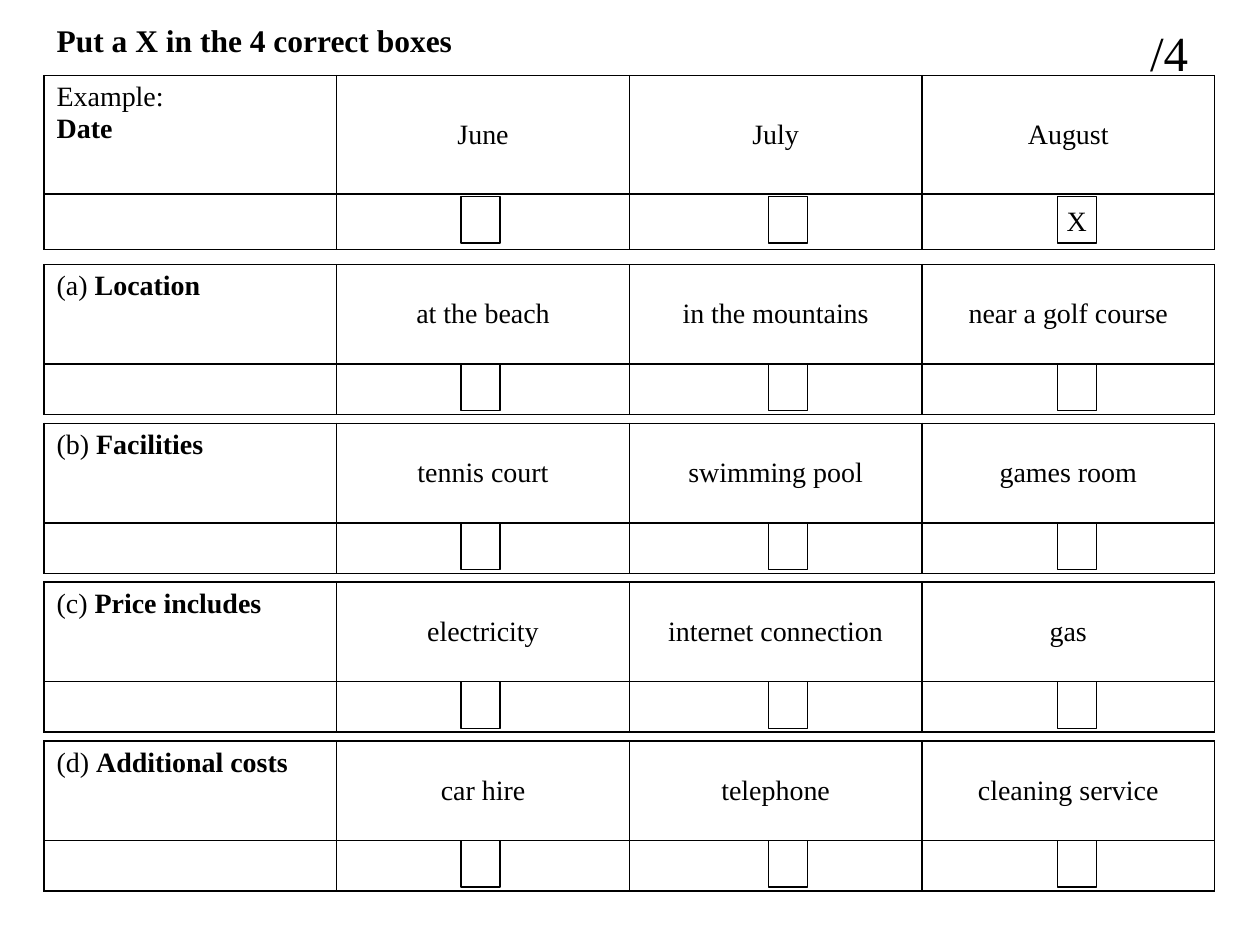
import pptx
import pptx.dml.color
import pptx.enum.shapes
import pptx.enum.text
import pptx.oxml
import pptx.oxml.ns
import pptx.util

Inches = pptx.util.Inches
ALIGN = pptx.enum.text.PP_ALIGN
ANCHOR = pptx.enum.text.MSO_ANCHOR
FONT = "Times New Roman"
INK = "000000"
LEFT, WIDTH, COLS = 0.35, 9.29, 4
BOX_X = (3.31, 5.75, 8.04)
BOX_W, BOX_H = 0.31, 0.37


def color(code):
    """Turn a hex string into a colour."""
    return pptx.dml.color.RGBColor.from_string(code)


def write(frame, lines, size=16, align=ALIGN.LEFT, anchor=ANCHOR.TOP):
    """Fill a text frame with lines made of (text, bold) runs."""
    frame.word_wrap = True
    frame.vertical_anchor = anchor
    for i, line in enumerate(lines):
        para = frame.paragraphs[0] if i == 0 else frame.add_paragraph()
        para.alignment = align
        for text, bold in line:
            run = para.add_run()
            run.text = text
            run.font.name = FONT
            run.font.size = pptx.util.Pt(size)
            run.font.bold = bold
            run.font.color.rgb = color(INK)


def edge(cell):
    """Draw thin lines round a cell and clear its fill."""
    props = cell._tc.get_or_add_tcPr()
    for side in "LRTB":
        props.append(pptx.oxml.parse_xml(
            f'<a:ln{side} {pptx.oxml.ns.nsdecls("a")} w="12700">'
            f'<a:solidFill><a:srgbClr val="{INK}"/></a:solidFill></a:ln{side}>'))
    cell.fill.background()


def tick(slide, x, y, mark):
    """Place one answer box, with its mark if any."""
    box = slide.shapes.add_shape(
        pptx.enum.shapes.MSO_SHAPE.RECTANGLE,
        Inches(x), Inches(y), Inches(BOX_W), Inches(BOX_H))
    box.shadow.inherit = False
    box.fill.background()
    box.line.color.rgb = color(INK)
    box.line.width = pptx.util.Pt(0.75)
    if mark:
        frame = box.text_frame
        frame.margin_left = frame.margin_right = 0
        write(frame, [[(mark, False)]], align=ALIGN.CENTER, anchor=ANCHOR.MIDDLE)


def question(slide, top, label, choices, rows=(0.79, 0.4), drop=0.79, marks=("", "", "")):
    """Place one question table and its answer boxes."""
    grid = slide.shapes.add_table(
        len(rows), COLS, Inches(LEFT), Inches(top),
        Inches(WIDTH), Inches(sum(rows))).table
    grid.first_row = grid.horz_banding = False
    for col in grid.columns:
        col.width = Inches(WIDTH / COLS)
    for row, high in zip(grid.rows, rows):
        row.height = Inches(high)
    for cell in grid.iter_cells():
        edge(cell)
    for col in range(COLS):
        grid.cell(1, col).margin_bottom = 0
    write(grid.cell(0, 0).text_frame, label)
    for col, choice in enumerate(choices, 1):
        cell = grid.cell(0, col)
        write(cell.text_frame, [[(choice, False)]], align=ALIGN.CENTER)
        cell.vertical_anchor = ANCHOR.MIDDLE
    for x, mark in zip(BOX_X, marks):
        tick(slide, LEFT + x, top + drop, mark)


def header(slide, x, y):
    """Place the instruction and the score."""
    title = slide.shapes.title
    title.left, title.top = Inches(x), Inches(y)
    title.width, title.height = Inches(7.56), Inches(0.4)
    title.text_frame.auto_size = pptx.enum.text.MSO_AUTO_SIZE.NONE
    write(title.text_frame, [[("Put a X in the 4 correct boxes", True)]], size=18)
    score = slide.shapes.add_textbox(
        Inches(x + 8.68), Inches(y + 0.01), Inches(0.87), Inches(0.57))
    write(score.text_frame, [[("/4", False)]], size=28)


def main():
    """Build and save the worksheet slide."""
    deck = pptx.Presentation()
    deck.slide_width, deck.slide_height = Inches(10), Inches(7.5)
    slide = deck.slides.add_slide(deck.slide_layouts[5])
    header(slide, LEFT, 0.12)
    question(slide, 0.6, [[("Example:", False)], [("Date", True)]],
             ("June", "July", "August"),
             rows=(0.94, 0.44), drop=0.96, marks=("", "", "X"))
    items = (
        ("a", "Location", ("at the beach", "in the mountains", "near a golf course")),
        ("b", "Facilities", ("tennis court", "swimming pool", "games room")),
        ("c", "Price includes", ("electricity", "internet connection", "gas")),
        ("d", "Additional costs", ("car hire", "telephone", "cleaning service")),
    )
    for i, (key, name, choices) in enumerate(items):
        question(slide, 2.1 + 1.26 * i, [[(f"({key}) ", False), (name, True)]], choices)
    deck.save("out.pptx")


if __name__ == "__main__":
    main()
